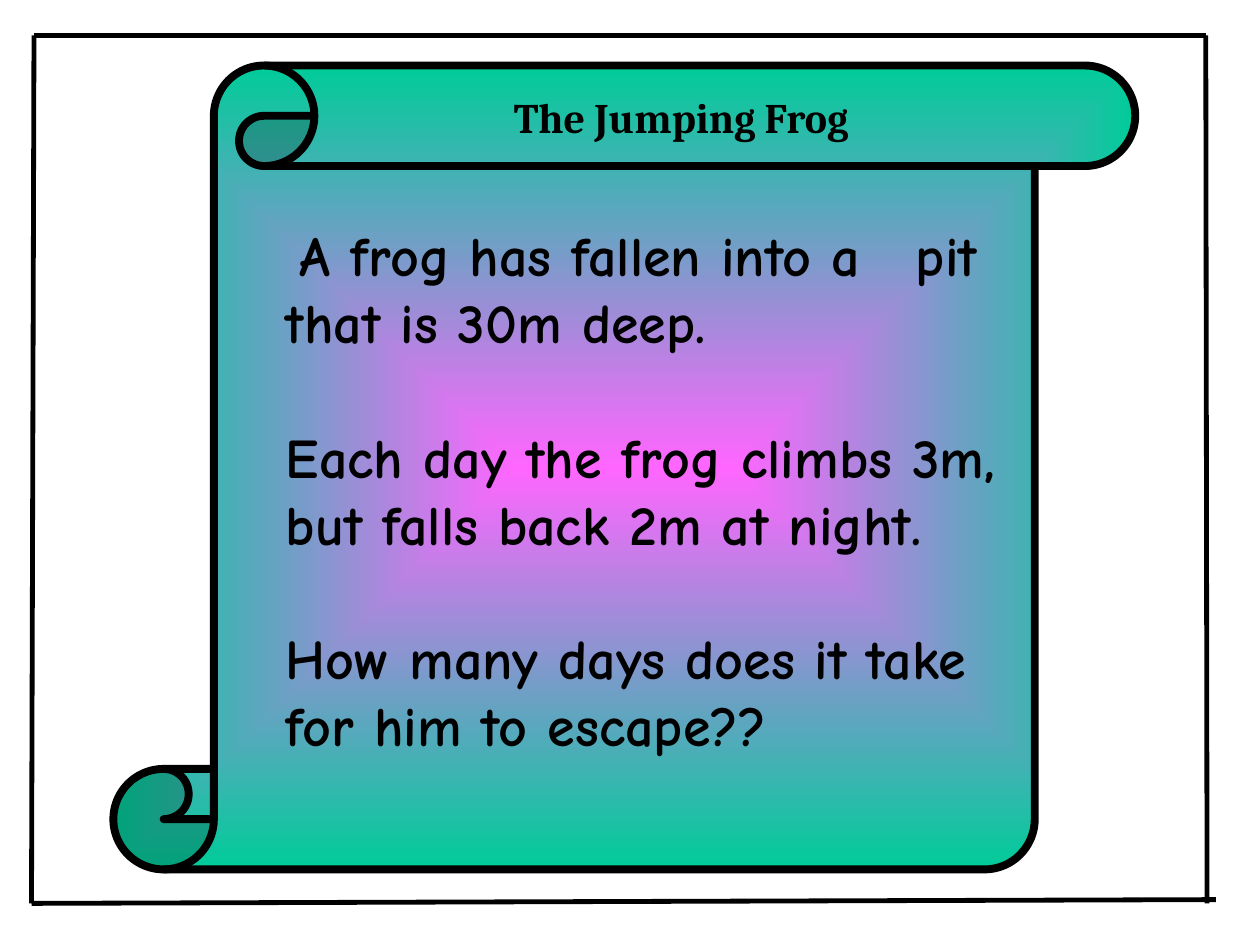
from lxml.etree import SubElement
from pptx import Presentation
from pptx.dml.color import RGBColor
from pptx.enum.shapes import MSO_CONNECTOR, MSO_SHAPE
from pptx.enum.text import MSO_AUTO_SIZE
from pptx.oxml.ns import qn
from pptx.util import Inches, Pt

COLORS = {"ink": "000000", "centre": "FF66FF", "edge": "00CC99"}


def rgb(name):
    return RGBColor.from_string(COLORS[name])


class SlideBuilder:
    title_font = "Cambria"
    body_font = "Comic Neue"

    def __init__(self, prs):
        self.slide = prs.slides.add_slide(prs.slide_layouts[6])

    def scroll(self, left, top, width, height):
        sp = self.slide.shapes.add_shape(
            MSO_SHAPE.VERTICAL_SCROLL,
            Inches(left), Inches(top), Inches(width), Inches(height))
        sp.adjustments[0] = 0.125
        sp.shadow.inherit = False
        sp.line.color.rgb = rgb("ink")
        sp.line.width = Pt(4.5)
        self.radiate(sp)

    def radiate(self, sp):
        """Fill with a rectangular gradient that spreads from the middle."""
        sp.fill.gradient()
        for stop, position, name in zip(sp.fill.gradient_stops, (0, 1), ("centre", "edge")):
            stop.position = position
            stop.color.rgb = rgb(name)
        grad = sp._element.spPr.find(qn("a:gradFill"))
        grad.remove(grad.find(qn("a:lin")))
        path = SubElement(grad, qn("a:path"), path="rect")
        SubElement(path, qn("a:fillToRect"), l="50000", t="50000", r="50000", b="50000")

    def text(self, left, top, width, height, paragraphs, font, size, wrap=True, gap=0):
        box = self.slide.shapes.add_textbox(
            Inches(left), Inches(top), Inches(width), Inches(height))
        tf = box.text_frame
        tf.word_wrap = wrap
        tf.auto_size = MSO_AUTO_SIZE.SHAPE_TO_FIT_TEXT
        for i, text in enumerate(paragraphs):
            p = tf.add_paragraph() if i else tf.paragraphs[0]
            if i:
                p.space_before = Pt(gap)
            r = p.add_run()
            r.text = text
            r.font.name = font
            r.font.size = Pt(size)
            r.font.bold = True
            r.font.color.rgb = rgb("ink")
        return tf

    def indent(self, p, first_line, tab):
        """Set the first-line indent and one left tab stop, in inches."""
        pPr = p._p.get_or_add_pPr()
        pPr.set("marL", "0")
        pPr.set("indent", str(Inches(first_line)))
        tabs = SubElement(pPr, qn("a:tabLst"))
        SubElement(tabs, qn("a:tab"), pos=str(Inches(tab)), algn="l")

    def line(self, start, end):
        cxn = self.slide.shapes.add_connector(
            MSO_CONNECTOR.STRAIGHT, *map(Inches, start + end))
        cxn.line.color.rgb = rgb("ink")
        cxn.line.width = Pt(2.75)
        SubElement(cxn._element.spPr, qn("a:effectLst"))


def main():
    prs = Presentation()
    prs.slide_width, prs.slide_height = Inches(10), Inches(7.5)
    s = SlideBuilder(prs)

    s.scroll(0.9, 0.52, 8.11, 6.38)
    puzzle = s.text(2.17, 1.7, 6.08, 5.36, [
        "A frog has fallen into a\tpit that is 30m deep.",
        "Each day the frog climbs 3m, but falls back 2m at night.",
        "How many days does it take for him to escape??",
    ], s.body_font, 32, gap=38.4)
    s.indent(puzzle.paragraphs[0], first_line=0.11, tab=5.35)
    s.text(3.98, 0.68, 3.06, 0.5, ["The Jumping Frog"], s.title_font, 24, wrap=False)

    top_left, bottom_left = (0.27, 0.28), (0.25, 7.17)
    top_right, bottom_right = (9.57, 0.28), (9.58, 7.17)
    s.line(bottom_left, (9.65, 7.14))
    s.line(top_left, top_right)
    s.line(bottom_left, top_left)
    s.line(bottom_right, top_right)

    prs.save("out.pptx")


if __name__ == "__main__":
    main()
